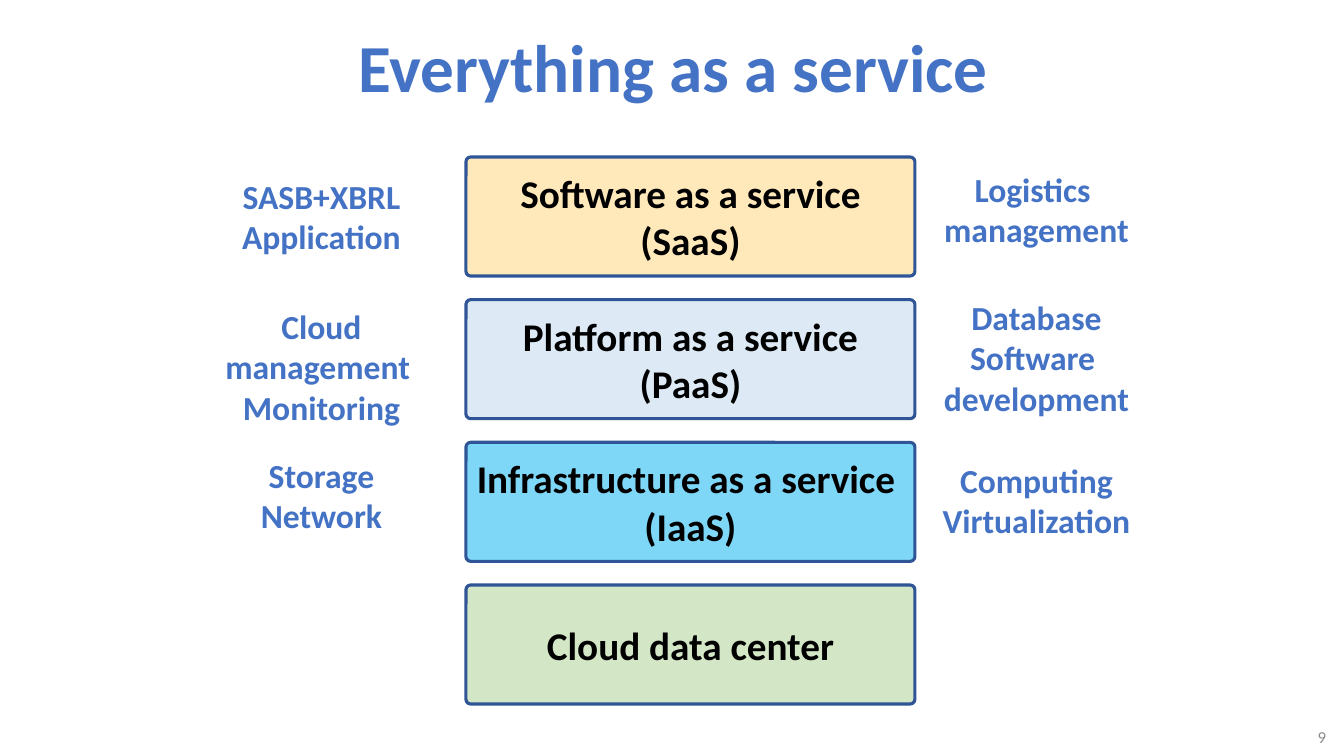
"""Build a slide that stacks the cloud service layers with examples on both sides."""
from lxml.etree import SubElement
from pptx import Presentation
from pptx.dml.color import RGBColor
from pptx.enum.shapes import MSO_SHAPE
from pptx.enum.text import MSO_ANCHOR, PP_ALIGN
from pptx.oxml.ns import qn
from pptx.util import Pt

TITLE = "Everything as a service"
PAGE_NUMBER = "9"
LAYERS = [
    ("Software as a service\n(SaaS)", "FFD579"),
    ("Platform as a service\n(PaaS)", "BDD7EE"),
    ("Infrastructure as a service \n(IaaS)", "00B0F0"),
    ("Cloud data center", "A9D18E"),
]
LEFT_EXAMPLES = [
    (171, 92, ["SASB+XBRL", "Application"]),
    (301, 132, ["Cloud management \nMonitoring"]),
    (450, 92, ["Storage Network"]),
]
RIGHT_EXAMPLES = [
    (164, 92, ["Logistics \nmanagement"]),
    (292, 132, ["Database", "Software \ndevelopment"]),
    (455, 92, ["Computing Virtualization"]),
]

THEME = {
    "font": "Calibri",
    "accent": "4472C4",
    "outline": "2F5597",
    "layer_text": "000000",
    "muted": "8C8C8C",
    "title_size": 48,
    "layer_size": 28,
    "example_size": 24,
    "number_size": 12,
    "outline_width": 2.25,
    "opacity": 50,
}

EMU_PER_INCH = 914400
PX_PER_INCH = 100.8
SLIDE_SIZE = (1344, 756)
TITLE_BOX = (220, 13, 907, 105)
NUMBER_BOX = (1230, 724, 106, 26)
LAYER_LEFT, LAYER_WIDTH, LAYER_HEIGHT = 466, 449, 119
FIRST_LAYER_TOP, LAST_LAYER_TOP = 157, 585
EXAMPLE_WIDTH = 245
EXAMPLE_COLUMNS = [(199, LEFT_EXAMPLES), (914, RIGHT_EXAMPLES)]
CORNER = 0.04


def px(length):
    return round(length * EMU_PER_INCH / PX_PER_INCH)


def write(text_frame, paragraphs, size, color, alignment=PP_ALIGN.CENTER, bold=True):
    for index, text in enumerate(paragraphs):
        paragraph = text_frame.add_paragraph() if index else text_frame.paragraphs[0]
        paragraph.alignment = alignment
        for line_index, line in enumerate(text.split("\n")):
            if line_index:
                paragraph.add_line_break()
            run = paragraph.add_run()
            run.text = line
            run.font.name = THEME["font"]
            run.font.size = Pt(size)
            run.font.bold = bold
            run.font.color.rgb = RGBColor.from_string(color)


def add_text(slide, box, paragraphs, size, color, anchor=MSO_ANCHOR.MIDDLE, **style):
    text_frame = slide.shapes.add_textbox(*map(px, box)).text_frame
    text_frame.word_wrap = True
    text_frame.vertical_anchor = anchor
    write(text_frame, paragraphs, size, color, **style)


def add_layer(slide, top, text, color):
    box = (LAYER_LEFT, top, LAYER_WIDTH, LAYER_HEIGHT)
    shape = slide.shapes.add_shape(MSO_SHAPE.ROUNDED_RECTANGLE, *map(px, box))
    shape.adjustments[0] = CORNER
    shape.shadow.inherit = False
    shape.fill.solid()
    shape.fill.fore_color.rgb = RGBColor.from_string(color)
    fill_color = shape.element.spPr.find(qn("a:solidFill"))[0]
    SubElement(fill_color, qn("a:alpha")).set("val", str(THEME["opacity"] * 1000))
    shape.line.color.rgb = RGBColor.from_string(THEME["outline"])
    shape.line.width = Pt(THEME["outline_width"])
    text_frame = shape.text_frame
    text_frame.margin_left = text_frame.margin_right = 0
    text_frame.margin_top = text_frame.margin_bottom = 0
    text_frame.word_wrap = False
    text_frame.vertical_anchor = MSO_ANCHOR.MIDDLE
    write(text_frame, [text], THEME["layer_size"], THEME["layer_text"])


def main():
    presentation = Presentation()
    presentation.slide_width, presentation.slide_height = map(px, SLIDE_SIZE)
    slide = presentation.slides.add_slide(presentation.slide_layouts[6])

    add_text(slide, TITLE_BOX, [TITLE], THEME["title_size"], THEME["accent"])
    add_text(slide, NUMBER_BOX, [PAGE_NUMBER], THEME["number_size"], THEME["muted"],
             alignment=PP_ALIGN.RIGHT, bold=False)

    pitch = (LAST_LAYER_TOP - FIRST_LAYER_TOP) / (len(LAYERS) - 1)
    for index, (text, color) in enumerate(LAYERS):
        add_layer(slide, FIRST_LAYER_TOP + index * pitch, text, color)

    for left, examples in EXAMPLE_COLUMNS:
        for top, height, paragraphs in examples:
            add_text(slide, (left, top, EXAMPLE_WIDTH, height), paragraphs,
                     THEME["example_size"], THEME["accent"], MSO_ANCHOR.TOP)

    presentation.save("out.pptx")


if __name__ == "__main__":
    main()
